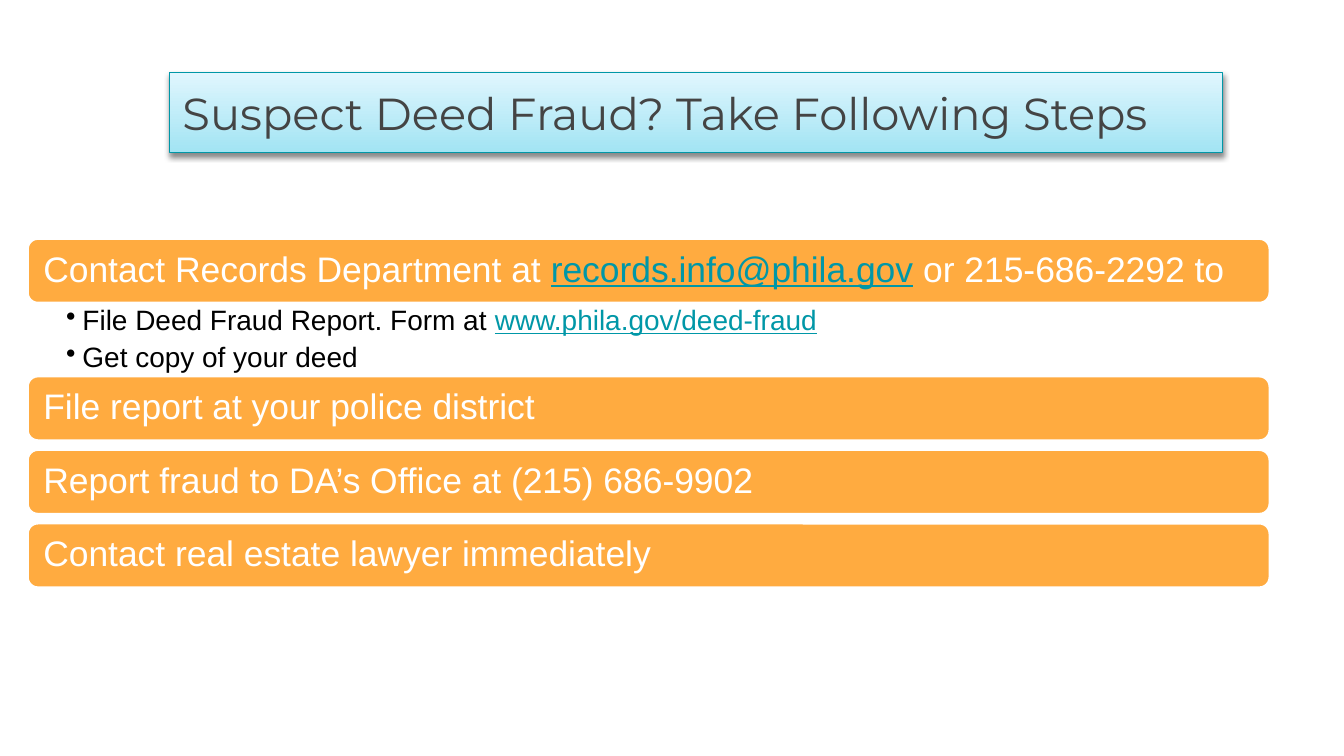
from lxml import etree
from pptx import Presentation
from pptx.dml.color import RGBColor
from pptx.enum import shapes, text
from pptx.oxml import ns
from pptx.util import Cm, Pt

ORANGE = RGBColor(0xFF, 0xAB, 0x40)
TEAL = RGBColor(0x00, 0x97, 0xA7)
PALE_BLUE = RGBColor(0xE0, 0xF6, 0xFE)
LIGHT_BLUE = RGBColor(0xA2, 0xE4, 0xF3)
GRAY = RGBColor(0x44, 0x44, 0x44)
WHITE = RGBColor(0xFF, 0xFF, 0xFF)
BLACK = RGBColor(0x00, 0x00, 0x00)

LEFT, WIDTH = Cm(0.51), Cm(23.5)
BAR_HEIGHT, BAR_PITCH = Cm(1.24), Cm(1.39)
FIRST_BAR_TOP, BULLETS_TOP, NEXT_BARS_TOP = Cm(4.5), Cm(5.73), Cm(7.1)

CONTACT = [("Contact Records Department at ", False),
           ("records.info@phila.gov", True),
           (" or 215-686-2292 to", False)]
CONTACT_DETAILS = [
    [("File Deed Fraud Report. Form at ", False),
     ("www.phila.gov/deed-fraud", True)],
    [("Get copy of your deed", False)],
]
NEXT_STEPS = ["File report at your police district",
              "Report fraud to DA’s Office at (215) 686-9902",
              "Contact real estate lawyer immediately"]


def set_frame(shape, left, top, right, bottom):
    frame = shape.text_frame
    frame.word_wrap = True
    frame.margin_left, frame.margin_top = left, top
    frame.margin_right, frame.margin_bottom = right, bottom
    return frame


def write_runs(paragraph, runs, size, color):
    paragraph.alignment = text.PP_ALIGN.LEFT
    paragraph.line_spacing = 0.9
    paragraph.font.name = "Arial"
    paragraph.font.size = Pt(size)
    for words, is_address in runs:
        run = paragraph.add_run()
        run.text = words
        run.font.color.rgb = TEAL if is_address else color
        if is_address:
            run.font.underline = True


def add_shadow(shape):
    effects = etree.SubElement(shape._element.spPr, ns.qn("a:effectLst"))
    shadow = etree.SubElement(effects, ns.qn("a:outerShdw"), blurRad="40000",
                              dist="23000", dir="5400000", rotWithShape="0")
    color = etree.SubElement(shadow, ns.qn("a:srgbClr"), val="000000")
    etree.SubElement(color, ns.qn("a:alpha"), val="45000")


def add_title(slide, words):
    title = slide.shapes.add_textbox(Cm(3.2), Cm(1.37), Cm(19.91), Cm(1.52))
    title.fill.gradient()
    title.fill.gradient_angle = 270
    for stop, color in zip(title.fill.gradient_stops, (PALE_BLUE, LIGHT_BLUE)):
        stop.color.rgb = color
    title.line.color.rgb = TEAL
    title.line.width = Pt(0.75)
    add_shadow(title)
    frame = set_frame(title, *[Cm(0.25)] * 4)
    paragraph = frame.paragraphs[0]
    paragraph.text = words
    paragraph.font.name = "Montserrat"
    paragraph.font.size = Pt(24)
    paragraph.font.color.rgb = GRAY


def add_bar(slide, top, runs):
    bar = slide.shapes.add_shape(shapes.MSO_SHAPE.ROUNDED_RECTANGLE,
                                 LEFT, top, WIDTH, BAR_HEIGHT)
    bar.shadow.inherit = False
    bar.fill.solid()
    bar.fill.fore_color.rgb = ORANGE
    bar.line.color.rgb = WHITE
    bar.line.width = Pt(2)
    frame = set_frame(bar, *[Cm(0.25)] * 4)
    frame.vertical_anchor = text.MSO_ANCHOR.MIDDLE
    write_runs(frame.paragraphs[0], runs, 19, WHITE)


def add_bullets(slide, top, items):
    box = slide.shapes.add_textbox(LEFT, top, WIDTH, Cm(1.37))
    frame = set_frame(box, Cm(0.74), Cm(0.06), Cm(0.38), Cm(0.06))
    for index, runs in enumerate(items):
        paragraph = frame.add_paragraph() if index else frame.paragraphs[0]
        paragraph.space_after = Pt(3.5)
        properties = paragraph._p.get_or_add_pPr()
        properties.set("marL", str(Cm(0.31)))
        properties.set("indent", str(-Cm(0.31)))
        etree.SubElement(properties, ns.qn("a:buChar"), char="•")
        write_runs(paragraph, runs, 15, BLACK)


def main():
    presentation = Presentation()
    presentation.slide_width, presentation.slide_height = Cm(25.4), Cm(14.29)
    slide = presentation.slides.add_slide(presentation.slide_layouts[6])
    add_title(slide, "Suspect Deed Fraud? Take Following Steps")
    add_bar(slide, FIRST_BAR_TOP, CONTACT)
    add_bullets(slide, BULLETS_TOP, CONTACT_DETAILS)
    for index, step in enumerate(NEXT_STEPS):
        add_bar(slide, NEXT_BARS_TOP + index * BAR_PITCH, [(step, False)])
    presentation.save("out.pptx")


if __name__ == "__main__":
    main()
